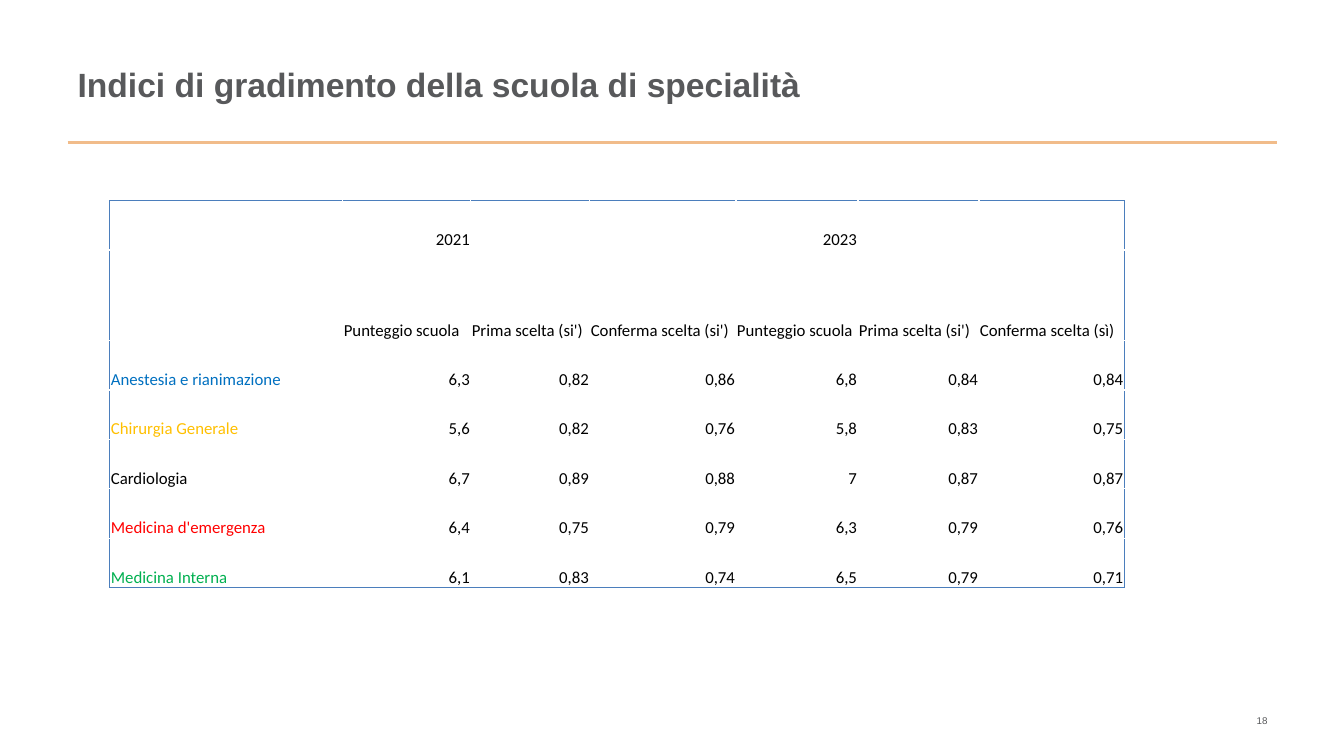
from lxml import etree
from pptx import Presentation
from pptx.dml.color import RGBColor
from pptx.enum.shapes import MSO_CONNECTOR
from pptx.enum.text import MSO_ANCHOR, PP_ALIGN
from pptx.oxml.ns import qn
from pptx.util import Pt

STRAIGHT = MSO_CONNECTOR.STRAIGHT
MIDDLE, BOTTOM = MSO_ANCHOR.MIDDLE, MSO_ANCHOR.BOTTOM
LEFT, RIGHT = PP_ALIGN.LEFT, PP_ALIGN.RIGHT

GREY = RGBColor(0x58, 0x59, 0x5B)
PEACH = RGBColor(0xF1, 0xBC, 0x8A)
FRAME_BLUE = RGBColor(0x4B, 0x7E, 0xBC)
BLACK = RGBColor(0, 0, 0)
BLUE = RGBColor(0x00, 0x70, 0xC0)
GOLD = RGBColor(0xFF, 0xC0, 0x00)
RED = RGBColor(0xFF, 0, 0)
GREEN = RGBColor(0x00, 0xB0, 0x50)

EMU_PER_PX = 9144  # 100 px to the inch
TITLE_ONLY = 5

COLUMN_WIDTHS = [231, 127, 118, 145, 121, 120, 144]
ROW_HEIGHTS = [49, 90, 49, 49, 49, 49, 49]
HEADER_ROWS = [
    ["", "2021", "", "", "2023", "", ""],
    ["", "Punteggio scuola", "Prima scelta (si')", "Conferma scelta (si')",
     "Punteggio scuola", "Prima scelta (si')", "Conferma scelta (sì)"],
]
SCHOOL_ROWS = [
    ["Anestesia e rianimazione", "6,3", "0,82", "0,86", "6,8", "0,84", "0,84"],
    ["Chirurgia Generale", "5,6", "0,82", "0,76", "5,8", "0,83", "0,75"],
    ["Cardiologia", "6,7", "0,89", "0,88", "7", "0,87", "0,87"],
    ["Medicina d'emergenza", "6,4", "0,75", "0,79", "6,3", "0,79", "0,76"],
    ["Medicina Interna", "6,1", "0,83", "0,74", "6,5", "0,79", "0,71"],
]
SCHOOL_COLORS = [BLUE, GOLD, BLACK, RED, GREEN]


def px(length):
    return length * EMU_PER_PX


class SlideBuilder:
    heading_font = "Arial"
    table_font = "Calibri"

    def __init__(self, deck):
        self.slide = deck.slides.add_slide(deck.slide_layouts[TITLE_ONLY])

    def format_text(self, frame, align, font, size, color, bold=False):
        para = frame.paragraphs[0]
        para.alignment = align
        para.font.size = Pt(size)
        for span in para.runs:
            span.font.name = font
            span.font.size = Pt(size)
            span.font.bold = bold
            span.font.color.rgb = color

    def title(self, text, left, top, width, height):
        box = self.slide.shapes.title
        box.left, box.top, box.width, box.height = map(px, (left, top, width, height))
        frame = box.text_frame
        frame.text = text
        frame.vertical_anchor = MIDDLE
        self.format_text(frame, LEFT, self.heading_font, 24, GREY, bold=True)

    def page_number(self, text, left, top, width, height):
        box = self.slide.shapes.add_textbox(*map(px, (left, top, width, height)))
        frame = box.text_frame
        frame.word_wrap = True
        frame.vertical_anchor = MIDDLE
        frame.text = text
        self.format_text(frame, RIGHT, self.heading_font, 7, GREY)

    def rule(self, left, right, y):
        line = self.slide.shapes.add_connector(STRAIGHT, *map(px, (left, y, right, y)))
        line.line.color.rgb = PEACH
        line.line.width = Pt(2)
        etree.SubElement(line._element.spPr, qn("a:effectLst"))

    def border(self, cell, side):
        properties = cell._tc.get_or_add_tcPr()
        line = etree.SubElement(properties, qn(f"a:ln{side}"), w=str(Pt(0.75)))
        fill = etree.SubElement(line, qn("a:solidFill"))
        etree.SubElement(fill, qn("a:srgbClr"), val=str(FRAME_BLUE))

    def table(self, rows, left, top):
        """Add the score table with a frame around its outer edge only."""
        size = px(sum(COLUMN_WIDTHS)), px(sum(ROW_HEIGHTS))
        table = self.slide.shapes.add_table(
            len(rows), len(COLUMN_WIDTHS), px(left), px(top), *size).table
        table.first_row = table.horz_banding = False
        for column, width in zip(table.columns, COLUMN_WIDTHS):
            column.width = px(width)
        for row, height in zip(table.rows, ROW_HEIGHTS):
            row.height = px(height)
        last_row, last_column = len(rows) - 1, len(COLUMN_WIDTHS) - 1
        for r, row in enumerate(rows):
            for c, text in enumerate(row):
                cell = table.cell(r, c)
                edges = {"L": c == 0, "R": c == last_column, "T": r == 0, "B": r == last_row}
                for side, is_outer in edges.items():
                    if is_outer:
                        self.border(cell, side)
                cell.fill.background()
                cell.margin_left = cell.margin_right = cell.margin_top = px(1)
                cell.margin_bottom = 0
                cell.vertical_anchor = BOTTOM
                cell.text_frame.text = text
                is_school = c == 0 and r >= len(HEADER_ROWS)
                color = SCHOOL_COLORS[r - len(HEADER_ROWS)] if is_school else BLACK
                align = LEFT if c == 0 or r == 1 else RIGHT
                self.format_text(cell.text_frame, align, self.table_font, 12, color)


def main():
    deck = Presentation()
    deck.slide_width, deck.slide_height = px(1333), px(750)
    page = SlideBuilder(deck)
    page.rule(67, 1267, 141)
    page.page_number("18", 956, 695, 311, 40)
    page.title("Indici di gradimento della scuola di specialità", 67, 35, 1200, 96)
    page.table(HEADER_ROWS + SCHOOL_ROWS, 109, 199)
    deck.save("out.pptx")


if __name__ == "__main__":
    main()
